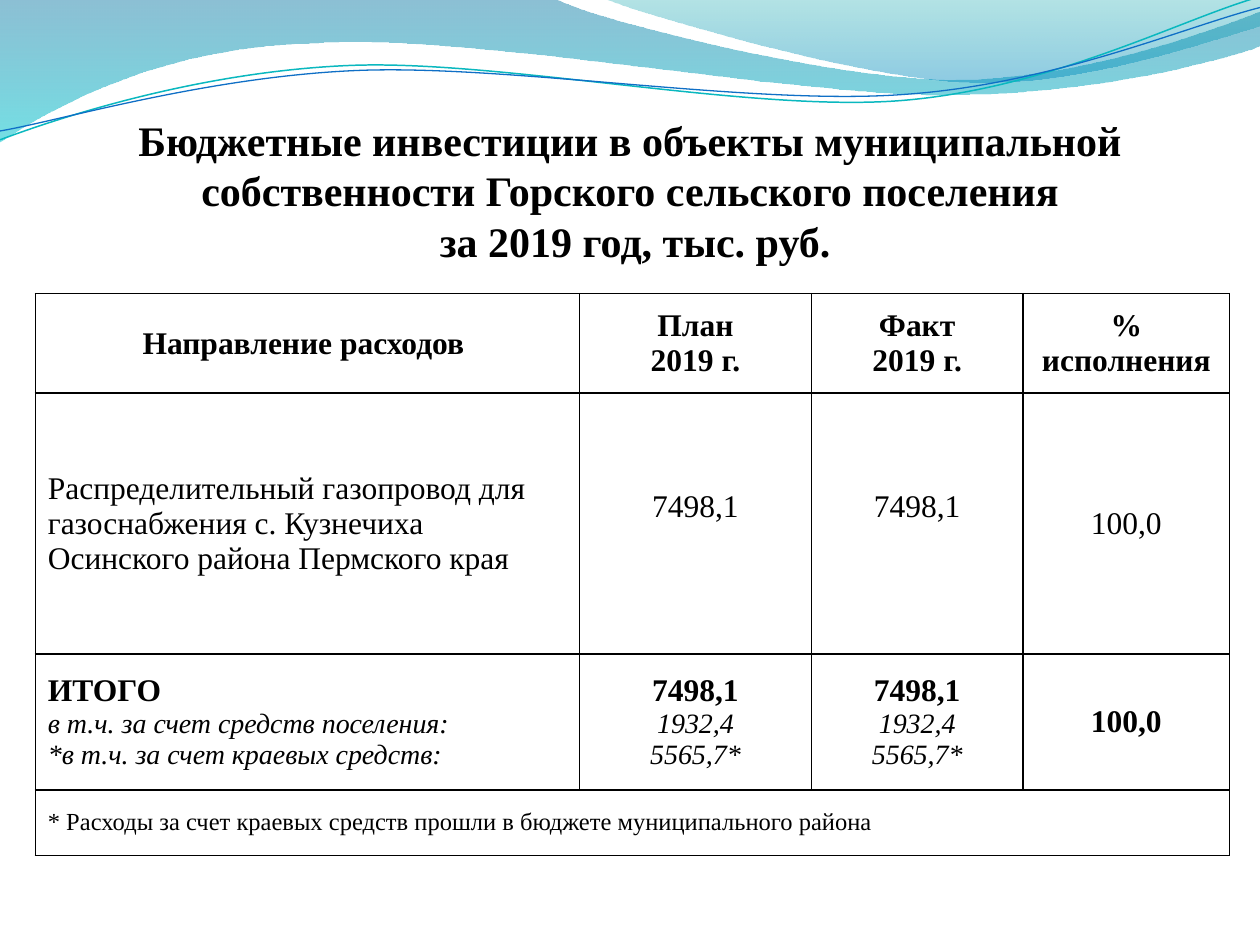
import math
from dataclasses import dataclass

from lxml import etree
from pptx import Presentation
from pptx import util as u
from pptx.dml.color import RGBColor
from pptx.enum import text
from pptx.oxml import ns

COLUMNS, ROWS = 10, 7.5  # page grid with one-inch units


@dataclass(frozen=True)
class Theme:
    font: str = "Times New Roman"
    ink: str = "000000"
    title: int = 24
    body: int = 18
    detail: int = 16
    note: int = 14
    border: float = 1
    # Gradient stops: colour and opacity in percent, from top to bottom
    wide_wave: tuple = (("0074A1", 45), ("00C6CF", 55))
    right_wave: tuple = (("00A1A9", 30), ("008BBF", 45))
    teal: str = "0AB8BF"
    blue: str = "0F6FC6"


THEME = Theme()
LEFT, CENTER = text.PP_ALIGN.LEFT, text.PP_ALIGN.CENTER
TILT = -2.7  # degrees, both thin curves

# Outlines: a pair is a corner, six numbers are a Bezier curve
WIDE_WAVE = [(0, 0), (4.4, -0.01), (4.76, 0.17, 6.64, 0.63, 7.58, 0.63),
             (8.53, 0.63, 9.58, 0.26, 10, 0.09), (10.01, 0.36),
             (9.83, 0.44, 8.7, 0.76, 7.46, 0.75),
             (6.22, 0.75, 3.82, 0.28, 2.57, 0.34),
             (1.29, 0.36, 0.46, 0.83, -0.01, 1.13)]
RIGHT_WAVE = [(4.79, -0.01), (5.09, 0.11, 6.82, 0.62, 7.69, 0.65),
              (8.56, 0.69, 9.61, 0.32, 10, 0.21), (10, 0)]
TEAL_CURVE = [(0, 1.11), (0.48, 0.93, 1.58, 0.57, 2.77, 0.52),
              (3.95, 0.47, 5.93, 0.89, 7.13, 0.8),
              (8.33, 0.71, 9.38, 0.15, 9.98, -0.02)]
BLUE_CURVE = [(0, 1.04), (0.47, 0.96, 1.64, 0.61, 2.83, 0.56),
              (4.03, 0.51, 5.97, 0.84, 7.17, 0.75),
              (8.36, 0.67, 9.41, 0.21, 10, 0.06)]


def grid(units):
    return u.Inches(units)


def color(code):
    return RGBColor.from_string(code)


def pairs(part):
    return list(zip(part[::2], part[1::2]))


def turn(outline, degrees, center):
    """Rotate every point of an outline about a center."""
    cos, sin = math.cos(math.radians(degrees)), math.sin(math.radians(degrees))
    cx, cy = center
    return [tuple(value for x, y in pairs(part)
                  for value in (cx + (x - cx) * cos - (y - cy) * sin,
                                cy + (x - cx) * sin + (y - cy) * cos))
            for part in outline]


def add_outline(page, outline, closed):
    start, *others = [(grid(part[-2]), grid(part[-1])) for part in outline]
    builder = page.shapes.build_freeform(*start)
    builder.add_line_segments(others, close=closed)
    shape = builder.convert_to_shape()
    shape.shadow.inherit = False
    # Bend the straight segments that have control points
    segments = list(shape._element.iter(ns.qn("a:lnTo")))
    for segment, part in zip(segments, outline[1:]):
        if len(part) == 6:
            bend = etree.Element(ns.qn("a:cubicBezTo"))
            for x, y in pairs(part):
                etree.SubElement(bend, ns.qn("a:pt"), x=str(grid(x) - shape.left),
                                 y=str(grid(y) - shape.top))
            segment.getparent().replace(segment, bend)
    return shape


def add_wave(page, outline, stops):
    shape = add_outline(page, outline, closed=True)
    shape.line.fill.background()
    shape.fill.gradient()
    shape.fill.gradient_angle = 270
    for stop, (code, opacity) in zip(shape.fill.gradient_stops, stops):
        stop.color.rgb = color(code)
    tints = shape._element.spPr.iter(ns.qn("a:srgbClr"))
    for tint, (code, opacity) in zip(tints, stops):
        etree.SubElement(tint, ns.qn("a:alpha"), val=str(opacity * 1000))


def add_curve(page, outline, center, code, width):
    shape = add_outline(page, turn(outline, -TILT, center), closed=False)
    shape.rotation = TILT
    shape.fill.background()
    shape.line.color.rgb = color(code)
    shape.line.width = u.Pt(width)


def write(frame, content, size=THEME.body, bold=False, align=LEFT, detail_from=None):
    """Write one paragraph a line; lines from detail_from on are small italics."""
    for index, line in enumerate(content.split("\n")):
        para = frame.paragraphs[0] if index == 0 else frame.add_paragraph()
        para.alignment = align
        detail = detail_from is not None and index >= detail_from
        span = para.add_run()
        span.text = line
        span.font.name = THEME.font
        span.font.size = u.Pt(THEME.detail if detail else size)
        span.font.bold = bold and not detail
        span.font.italic = detail
        span.font.color.rgb = color(THEME.ink)


def add_title(page, content):
    box = page.shapes.add_textbox(grid(0.39), grid(0.86), grid(9.22), grid(1.31))
    box.text_frame.word_wrap = True
    box.text_frame.auto_size = text.MSO_AUTO_SIZE.SHAPE_TO_FIT_TEXT
    write(box.text_frame, content, size=THEME.title, bold=True, align=CENTER)


def set_borders(cell):
    properties = cell._tc.get_or_add_tcPr()
    for index, side in enumerate(("lnL", "lnR", "lnT", "lnB")):
        line = etree.Element(ns.qn("a:" + side), w=str(u.Pt(THEME.border)))
        fill = etree.SubElement(line, ns.qn("a:solidFill"))
        etree.SubElement(fill, ns.qn("a:srgbClr"), val=THEME.ink)
        properties.insert(index, line)


def add_budget_table(page, rows, widths, heights):
    frame = page.shapes.add_table(len(heights), len(widths), grid(0.28), grid(2.33),
                                  grid(sum(widths)), grid(sum(heights)))
    table = frame.table
    for column, width in zip(table.columns, widths):
        column.width = grid(width)
    for row, height in zip(table.rows, heights):
        row.height = grid(height)
    for cell in table.iter_cells():
        cell.fill.background()
        cell.vertical_anchor = text.MSO_ANCHOR.MIDDLE
        set_borders(cell)
    for r, (contents, style) in enumerate(rows):
        for c, content in enumerate(contents):
            align = LEFT if c == 0 and r > 0 else CENTER
            write(table.cell(r, c).text_frame, content, align=align, **style)
    # Plan and fact sit slightly above the middle of their row
    for c in (1, 2):
        table.cell(1, c).margin_bottom = grid(0.32)
    # The footnote runs across all columns
    last = len(heights) - 1
    table.cell(last, 0).merge(table.cell(last, len(widths) - 1))


def main():
    deck = Presentation()
    deck.slide_width, deck.slide_height = grid(COLUMNS), grid(ROWS)
    page = deck.slides.add_slide(deck.slide_layouts[6])

    # Waves along the top
    add_wave(page, WIDE_WAVE, THEME.wide_wave)
    add_wave(page, RIGHT_WAVE, THEME.right_wave)
    add_curve(page, TEAL_CURVE, (4.99, 0.57), THEME.teal, 0.85)
    add_curve(page, BLUE_CURVE, (5, 0.59), THEME.blue, 0.75)

    add_title(page, "Бюджетные инвестиции в объекты муниципальной собственности "
                    "Горского сельского поселения\n за 2019 год, тыс. руб.")

    # Budget figures
    amount = "7498,1"
    total = amount + "\n1932,4\n5565,7*"
    rows = [
        (("Направление расходов ", "План\n2019 г.", "Факт\n2019 г.", "% исполнения"),
         {"bold": True}),
        (("Распределительный газопровод для газоснабжения с. Кузнечиха "
          "Осинского района Пермского края", amount, amount, "100,0"), {}),
        (("ИТОГО\nв т.ч. за счет средств поселения:\n*в т.ч. за счет краевых средств:",
          total, total, "100,0"), {"bold": True, "detail_from": 1}),
        (("* Расходы за счет краевых средств прошли в бюджете муниципального района",),
         {"size": THEME.note}),
    ]
    add_budget_table(page, rows, widths=(4.32, 1.84, 1.68, 1.64),
                     heights=(0.79, 2.07, 1.08, 0.52))
    deck.save("out.pptx")


if __name__ == "__main__":
    main()
